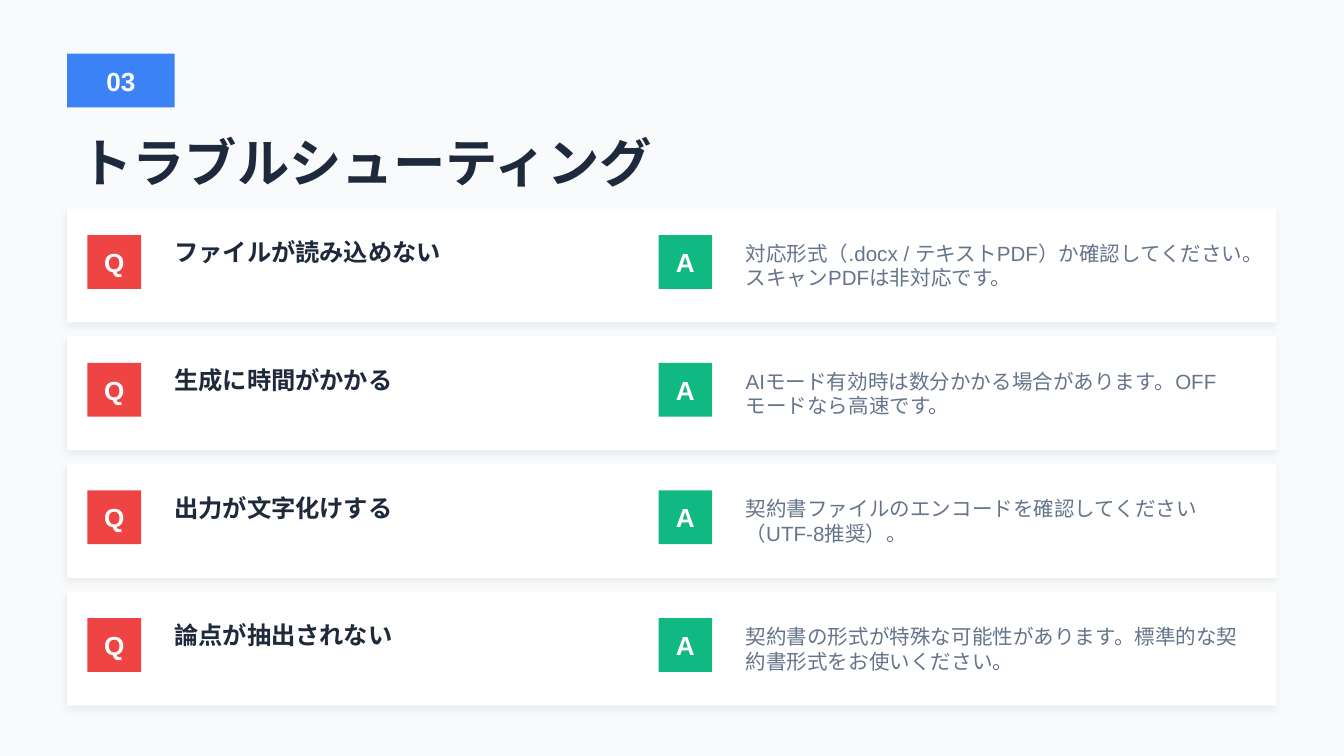
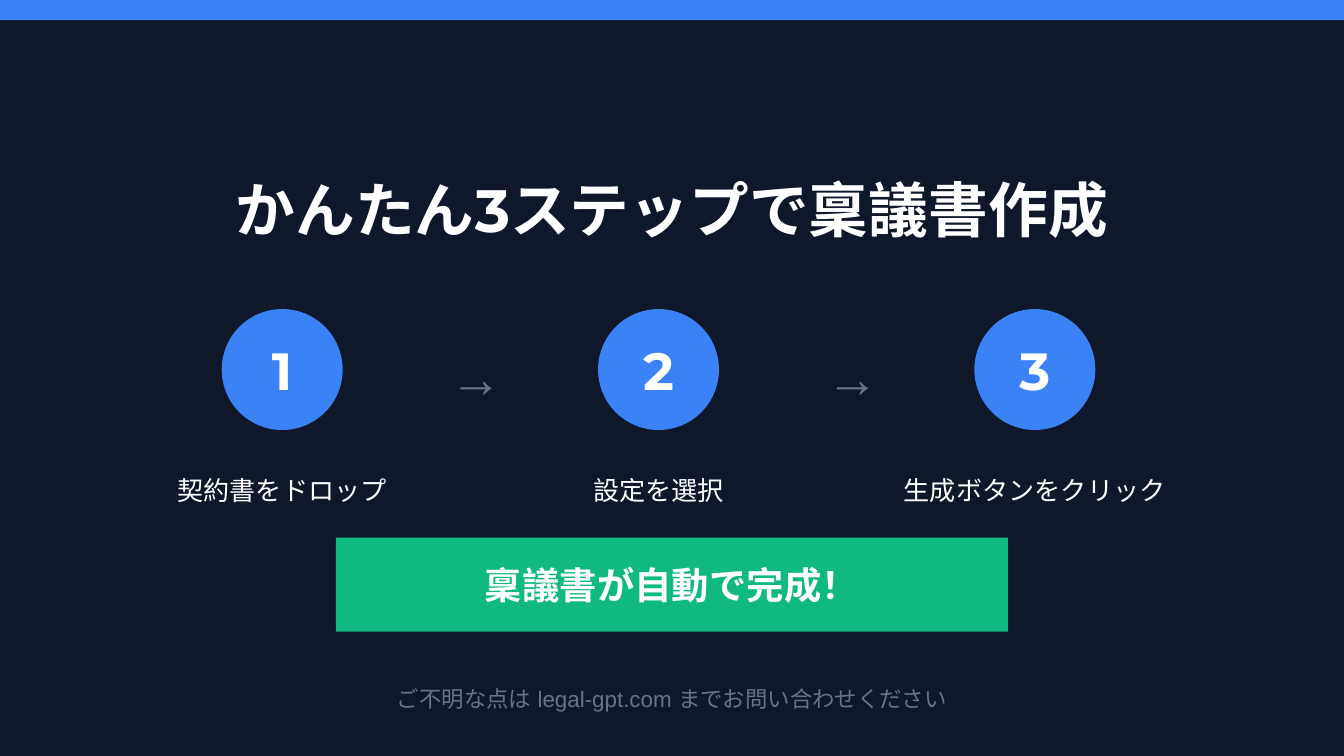
from dataclasses import dataclass

from lxml import etree
from pptx import Presentation
from pptx.dml.color import RGBColor
from pptx.enum.shapes import MSO_SHAPE
from pptx.enum.text import MSO_ANCHOR, MSO_AUTO_SIZE, PP_ALIGN
from pptx.oxml.ns import qn
from pptx.shapes.autoshape import Shape
from pptx.slide import Slide
from pptx.util import Pt

RECTANGLE = MSO_SHAPE.RECTANGLE
OVAL = MSO_SHAPE.OVAL
LEFT = PP_ALIGN.LEFT
CENTER = PP_ALIGN.CENTER
MIDDLE = MSO_ANCHOR.MIDDLE
NO_FIT = MSO_AUTO_SIZE.NONE

WHITE = RGBColor(0xFF, 0xFF, 0xFF)
PALE = RGBColor(0xF8, 0xFA, 0xFC)
NAVY = RGBColor(0x0F, 0x17, 0x2A)
INK = RGBColor(0x1E, 0x29, 0x3B)
GREY = RGBColor(0x64, 0x74, 0x8B)
BLUE = RGBColor(0x3B, 0x82, 0xF6)
RED = RGBColor(0xEF, 0x44, 0x44)
GREEN = RGBColor(0x10, 0xB9, 0x81)

BODY_FONT = "Arial"
HEAD_FONT = "Montserrat"
SLIDE_WIDTH, SLIDE_HEIGHT = 720, 405
MARGIN = 36
CONTENT_WIDTH = SLIDE_WIDTH - 2 * MARGIN
TITLE_ONLY = 5


@dataclass(frozen=True)
class Area:
    """A rectangle on the slide, in points."""

    left: float
    top: float
    width: float
    height: float


@dataclass(frozen=True)
class Style:
    """The look of one piece of text."""

    size: float
    color: RGBColor
    bold: bool = False
    align: PP_ALIGN = CENTER
    font: str = BODY_FONT


@dataclass(frozen=True)
class Trouble:
    """A question and its answer."""

    question: str
    answer: str


BADGE = Style(14, WHITE, bold=True)
PAGE_TITLE = Style(28, INK, bold=True, align=LEFT, font=HEAD_FONT)
QUESTION = Style(13, INK, bold=True, align=LEFT)
ANSWER = Style(11, GREY, align=LEFT)
CLOSING_TITLE = Style(32, WHITE, bold=True, font=HEAD_FONT)
STEP_NUMBER = Style(28, WHITE, bold=True, font=HEAD_FONT)
STEP_LABEL = Style(14, WHITE)
STEP_ARROW = Style(28, GREY)
BANNER = Style(20, WHITE, bold=True)
CONTACT = Style(12, GREY)

TROUBLES = [
    Trouble("ファイルが読み込めない",
            "対応形式（.docx / テキストPDF）か確認してください。スキャンPDFは非対応です。"),
    Trouble("生成に時間がかかる",
            "AIモード有効時は数分かかる場合があります。OFFモードなら高速です。"),
    Trouble("出力が文字化けする",
            "契約書ファイルのエンコードを確認してください（UTF-8推奨）。"),
    Trouble("論点が抽出されない",
            "契約書の形式が特殊な可能性があります。標準的な契約書形式をお使いください。"),
]
STEPS = ["契約書をドロップ", "設定を選択", "生成ボタンをクリック"]

CARD_TOP, CARD_HEIGHT, CARD_PITCH = 111.6, 61.2, 68.4
BADGE_SIZE = 28.8
STEP_LEFT, STEP_WIDTH, STEP_PITCH = 72, 158.4, 201.6
CIRCLE_SIZE = 64.8


def write(shape: Shape, text: str, style: Style) -> None:
    """Put styled, vertically centred text into a shape."""
    frame = shape.text_frame
    frame.text = text
    frame.word_wrap = True
    frame.auto_size = NO_FIT
    frame.vertical_anchor = MIDDLE
    para = frame.paragraphs[0]
    para.alignment = style.align
    for span in para.runs:
        span.font.size = Pt(style.size)
        span.font.bold = style.bold
        span.font.color.rgb = style.color
        span.font.name = style.font
        latin = span.font._element.find(qn("a:latin"))
        latin.addnext(latin.makeelement(qn("a:ea"), {"typeface": style.font}))


def add_block(page: Slide, area: Area, fill: RGBColor, kind: MSO_SHAPE = RECTANGLE) -> Shape:
    """Draw a filled shape without outline or shadow."""
    block = page.shapes.add_shape(
        kind, Pt(area.left), Pt(area.top), Pt(area.width), Pt(area.height))
    block.fill.solid()
    block.fill.fore_color.rgb = fill
    block.line.fill.background()
    block.shadow.inherit = False
    return block


def add_text(page: Slide, area: Area, text: str, style: Style) -> None:
    """Add a wrapping text box."""
    box = page.shapes.add_textbox(
        Pt(area.left), Pt(area.top), Pt(area.width), Pt(area.height))
    write(box, text, style)


def add_soft_shadow(shape: Shape) -> None:
    """Give a shape a faint drop shadow."""
    effects = shape._element.spPr.find(qn("a:effectLst"))
    shadow = etree.SubElement(effects, qn("a:outerShdw"), {
        "blurRad": str(Pt(4)), "dist": str(Pt(2)), "dir": str(135 * 60000),
        "algn": "bl", "rotWithShape": "0"})
    color = etree.SubElement(shadow, qn("a:srgbClr"), {"val": "000000"})
    etree.SubElement(color, qn("a:alpha"), {"val": "6000"})


def add_page(deck: Presentation, background: RGBColor, title: str, area: Area,
             style: Style) -> Slide:
    """Add a slide with a background colour and a placed title."""
    page = deck.slides.add_slide(deck.slide_layouts[TITLE_ONLY])
    page.background.fill.solid()
    page.background.fill.fore_color.rgb = background
    heading = page.shapes.title
    heading.left, heading.top = Pt(area.left), Pt(area.top)
    heading.width, heading.height = Pt(area.width), Pt(area.height)
    write(heading, title, style)
    return page


def add_trouble(page: Slide, top: float, trouble: Trouble) -> None:
    """Draw one question and answer card."""
    card = add_block(page, Area(MARGIN, top, CONTENT_WIDTH, CARD_HEIGHT), WHITE)
    add_soft_shadow(card)
    for letter, left, color in (("Q", 46.8, RED), ("A", 352.8, GREEN)):
        badge = add_block(page, Area(left, top + 14.4, BADGE_SIZE, BADGE_SIZE), color)
        write(badge, letter, BADGE)
    add_text(page, Area(86.4, top + 10.8, 252, 25.2), trouble.question, QUESTION)
    add_text(page, Area(392.4, top + 10.8, 280.8, 39.6), trouble.answer, ANSWER)


def add_step(page: Slide, index: int, label: str) -> None:
    """Draw one numbered step, with an arrow from the step before."""
    left = STEP_LEFT + index * STEP_PITCH
    circle_left = left + (STEP_WIDTH - CIRCLE_SIZE) / 2
    circle = add_block(page, Area(circle_left, 165.6, CIRCLE_SIZE, CIRCLE_SIZE), BLUE, OVAL)
    write(circle, str(index + 1), STEP_NUMBER)
    add_text(page, Area(left, 244.8, STEP_WIDTH, 36), label, STEP_LABEL)
    if index:
        add_text(page, Area(left - 39.6, 183.6, 36, 36), "→", STEP_ARROW)


def build_troubleshooting(deck: Presentation) -> None:
    """Build the question and answer slide."""
    page = add_page(deck, PALE, "トラブルシューティング",
                    Area(MARGIN, 64.8, CONTENT_WIDTH, 43.2), PAGE_TITLE)
    section = add_block(page, Area(MARGIN, 28.8, 57.6, 28.8), BLUE)
    write(section, "03", BADGE)
    for index, trouble in enumerate(TROUBLES):
        add_trouble(page, CARD_TOP + index * CARD_PITCH, trouble)


def build_closing(deck: Presentation) -> None:
    """Build the three-step closing slide."""
    page = add_page(deck, NAVY, "かんたん3ステップで稟議書作成",
                    Area(MARGIN, 86.4, CONTENT_WIDTH, 50.4), CLOSING_TITLE)
    add_block(page, Area(0, 0, SLIDE_WIDTH, 10.8), BLUE)
    for index, label in enumerate(STEPS):
        add_step(page, index, label)
    banner = add_block(page, Area(180, 288, 360, 50.4), GREEN)
    write(banner, "稟議書が自動で完成！", BANNER)
    add_text(page, Area(MARGIN, 360, CONTENT_WIDTH, 28.8),
             "ご不明な点は legal-gpt.com までお問い合わせください", CONTACT)


def main() -> None:
    """Build and save the deck."""
    deck = Presentation()
    deck.slide_width, deck.slide_height = Pt(SLIDE_WIDTH), Pt(SLIDE_HEIGHT)
    build_troubleshooting(deck)
    build_closing(deck)
    deck.save("out.pptx")


if __name__ == "__main__":
    main()
